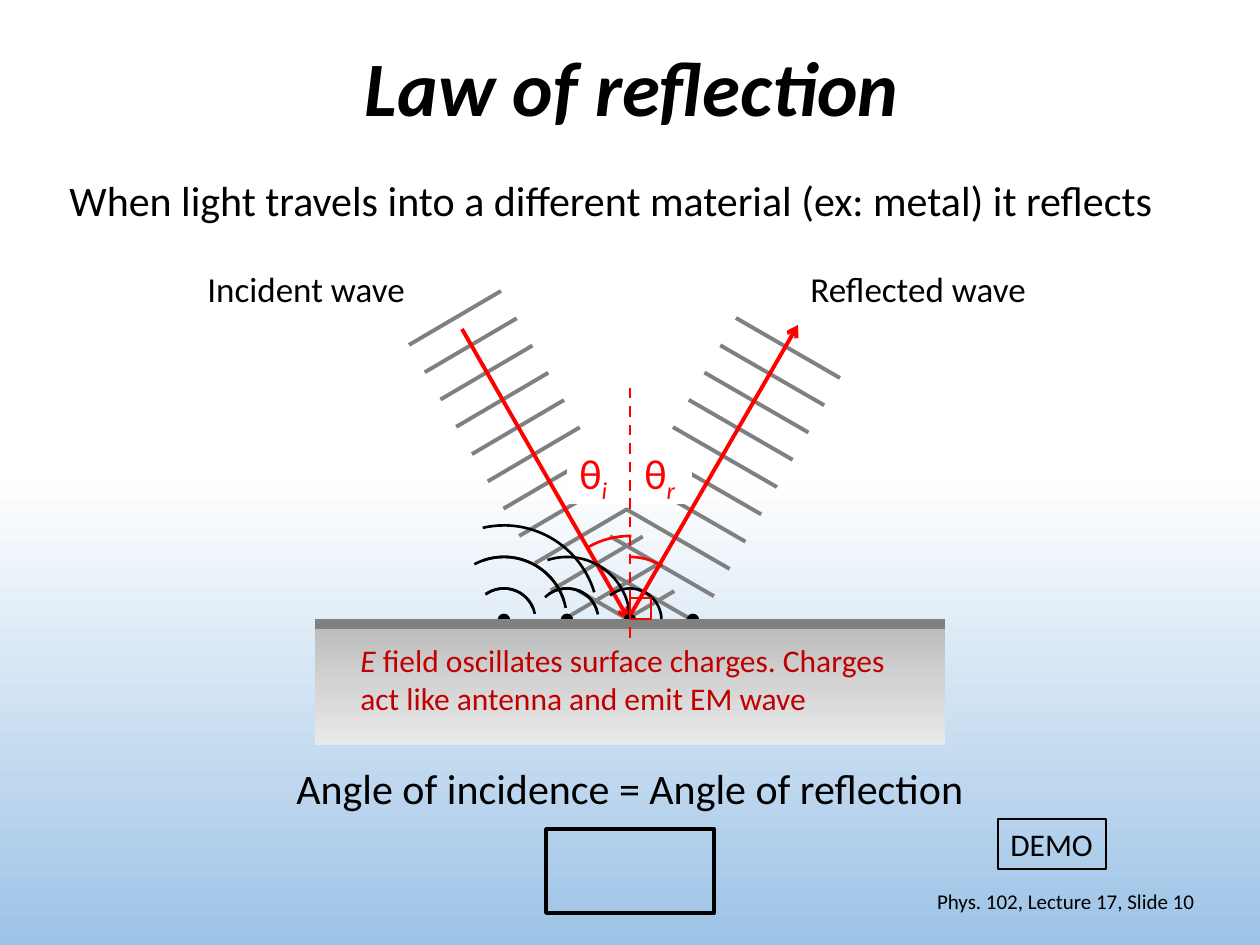
from copy import deepcopy
from dataclasses import dataclass
from math import cos, radians, sin

from lxml.etree import SubElement
from pptx import Presentation
from pptx.dml.color import RGBColor as RGB
from pptx.enum.dml import MSO_LINE as DASH
from pptx.enum.shapes import MSO_CONNECTOR as CONN, MSO_SHAPE as SHAPE
from pptx.enum.text import MSO_ANCHOR as ANCHOR, MSO_AUTO_SIZE as AUTO, PP_ALIGN as ALIGN
from pptx.oxml.ns import qn
from pptx.util import Emu, Pt


@dataclass(frozen=True)
class Theme:
    font: str = "Calibri"
    black: str = "000000"
    white: str = "FFFFFF"
    sky: str = "9DC3E6"
    gray: str = "808080"
    red: str = "FF0000"
    dark_red: str = "C00000"
    metal: tuple = ((0, "B8B8B8"), (0.5, "D3D3D3"), (1, "E9E9E9"))
    title: int = 44
    body: int = 24
    label: int = 20
    note: int = 18
    footer: int = 12
    thin: float = 0.75
    medium: float = 1.5
    thick: float = 2.25
    surface: float = 6


T = Theme()
HIT_X, HIT_Y = 630, 620  # where the ray meets the surface
CHARGE_GAP = 63
WAVELENGTH = 31.5
RAY_ANGLE = 60

# Emission stages: (charge index, radius in wavelengths, start, end) in degrees
STAGES = [
    ([0], [(0, 1, 235, 349)]),
    ([1], [(0, 1, 234, 339), (0, 2, 250, 342), (1, 1, 226, 343)]),
    ([2, 3], [(0, 2, 242, 349), (1, 1, 235, 350), (1, 2, 252, 0),
              (2, 1, 231, 0), (0, 3, 257, 343)]),
]


def px(n):
    return Emu(round(n * 914400 / 126))


def gradient(fill, element, stops):
    """Vertical gradient, first stop on top."""
    fill.gradient()
    fill.gradient_angle = 270
    stop_list = next(element.iter(qn("a:gsLst")))
    while len(stop_list) < len(stops):
        stop_list.append(deepcopy(stop_list[-1]))
    for stop, (position, color) in zip(fill.gradient_stops, stops):
        stop.position = position
        stop.color.rgb = RGB.from_string(color)


def outline(sp, color, width):
    sp.line.color.rgb = RGB.from_string(color)
    sp.line.width = Pt(width)


def line(shapes, start, end, color, width, dash=None, arrow=False):
    c = shapes.add_connector(CONN.STRAIGHT, *map(px, (*start, *end)))
    outline(c, color, width)
    if dash:
        c.line.dash_style = dash
    if arrow:
        SubElement(c.line._get_or_add_ln(), qn("a:tailEnd"), type="arrow")
    SubElement(c._element.spPr, qn("a:effectLst"))


def shape(shapes, kind, box, color=None, width=T.medium, fill=None):
    sp = shapes.add_shape(kind, *map(px, box))
    sp.shadow.inherit = False
    if fill:
        sp.fill.solid()
        sp.fill.fore_color.rgb = RGB.from_string(fill)
    else:
        sp.fill.background()
    if color:
        outline(sp, color, width)
    else:
        sp.line.fill.background()
    return sp


def arc(shapes, x, radius, start, end, color=T.black, fill=None):
    box = (x - radius, HIT_Y - radius, 2 * radius, 2 * radius)
    sp = shape(shapes, SHAPE.ARC, box, color, fill=fill)
    for i, angle in enumerate((start, end)):
        sp.adjustments[i] = angle * 0.6  # 60000ths of a degree, over 100000


def text(shapes, box, runs, size, color=T.black, wrap=False, grow=True,
         align=None, anchor=ANCHOR.TOP):
    """Each run is (wording, flags); flags: b bold, i italic, s subscript."""
    tb = shapes.add_textbox(*map(px, box))
    tf = tb.text_frame
    tf.word_wrap = wrap
    tf.auto_size = AUTO.SHAPE_TO_FIT_TEXT if grow else AUTO.NONE
    tf.vertical_anchor = anchor
    p = tf.paragraphs[0]
    p.alignment = align
    for wording, flags in runs:
        r = p.add_run()
        r.text = wording
        r.font.name = T.font
        r.font.size = Pt(size)
        r.font.color.rgb = RGB.from_string(color)
        r.font.bold = "b" in flags
        r.font.italic = "i" in flags
        if "s" in flags:
            r._r.get_or_add_rPr().set("baseline", "-25000")
    return tb


def wavefronts(shapes, first, span, count, side):
    """Parallel crests, one wavelength apart along the ray."""
    group = shapes.add_group_shape().shapes
    dx = side * WAVELENGTH * cos(radians(RAY_ANGLE))
    dy = WAVELENGTH * sin(radians(RAY_ANGLE))
    for i in range(count):
        x, y = first[0] + i * dx, first[1] + i * dy
        line(group, (x, y), (x + span[0], y + span[1]), T.gray, T.thick)


def emission(shapes):
    first_x = HIT_X - 2 * CHARGE_GAP
    for charges, waves in STAGES:
        group = shapes.add_group_shape().shapes
        for i in charges:
            arc(group, first_x + i * CHARGE_GAP, 5, 181, 0, fill=T.black)
        for i, n, start, end in waves:
            arc(group, first_x + i * CHARGE_GAP, n * WAVELENGTH, start, end)


def angles(shapes):
    group = shapes.add_group_shape().shapes
    line(group, (HIT_X, 388), (HIT_X, 640), T.red, T.medium, dash=DASH.DASH)
    arc(group, HIT_X, 63, 270, 301, T.red)
    arc(group, HIT_X, 84, 239, 271, T.red)
    for x, width, index in ((567, 56, "i"), (632, 60, "r")):
        tb = text(group, (x, 441, width, 63), [("θ", ""), (index, "is")], T.body, T.red)
        tb.fill.solid()
        tb.fill.fore_color.rgb = RGB.from_string(T.white)
    shape(group, SHAPE.RECTANGLE, (HIT_X, 598, 21, 21), T.red)


def main():
    prs = Presentation()
    prs.slide_width, prs.slide_height = px(1260), px(945)
    slide = prs.slides.add_slide(prs.slide_layouts[6])
    gradient(slide.background.fill, slide._element, ((0.5, T.white), (1, T.sky)))
    s = slide.shapes

    # Incident and reflected waves, surface charges
    wavefronts(s, (409, 345), (92, -54), 12, 1)
    wavefronts(s, (736, 318), (104, 60), 11, -1)
    line(s, (462, 329), (629, 620), T.red, T.thick, arrow=True)
    emission(s)

    # Metal block
    metal = shape(s, SHAPE.RECTANGLE, (315, 619, 630, 126))
    gradient(metal.fill, metal._element, T.metal)
    line(s, (315, 624), (945, 624), T.gray, T.surface)

    # Reflected ray and angles
    line(s, (631, 614), (798, 325), T.red, T.thick, arrow=True)
    angles(s)

    # Wording
    text(s, (195, 261, 224, 55), [("Incident wave", "")], T.label)
    text(s, (798, 261, 243, 55), [("Reflected wave", "")], T.label)
    text(s, (284, 756, 699, 63), [("Angle of incidence = Angle of reflection", "")], T.body)
    title = text(s, (89, 0, 1086, 183), [("Law of reflection", "bi")], T.title,
                 wrap=True, grow=False, align=ALIGN.CENTER, anchor=ANCHOR.MIDDLE)
    title.text_frame.paragraphs[0].line_spacing = 0.9
    shape(s, SHAPE.RECTANGLE, (546, 829, 168, 84), T.black, T.thick)
    text(s, (348, 635, 577, 89),
         [("E", "i"), (" field oscillates surface charges. Charges act like antenna "
                       "and emit EM wave", "")], T.note, T.dark_red, wrap=True)
    text(s, (890, 876, 317, 50), [("Phys. 102, Lecture 17, Slide 10", "")], T.footer,
         wrap=True, grow=False, align=ALIGN.RIGHT, anchor=ANCHOR.MIDDLE)
    text(s, (57, 168, 1142, 63),
         [("When light travels into a different material (ex: metal) it reflects", "")],
         T.body, wrap=True)
    demo = text(s, (998, 819, 108, 50), [("DEMO", "")], T.note)
    outline(demo, T.black, T.thin)

    prs.save("out.pptx")


if __name__ == "__main__":
    main()
